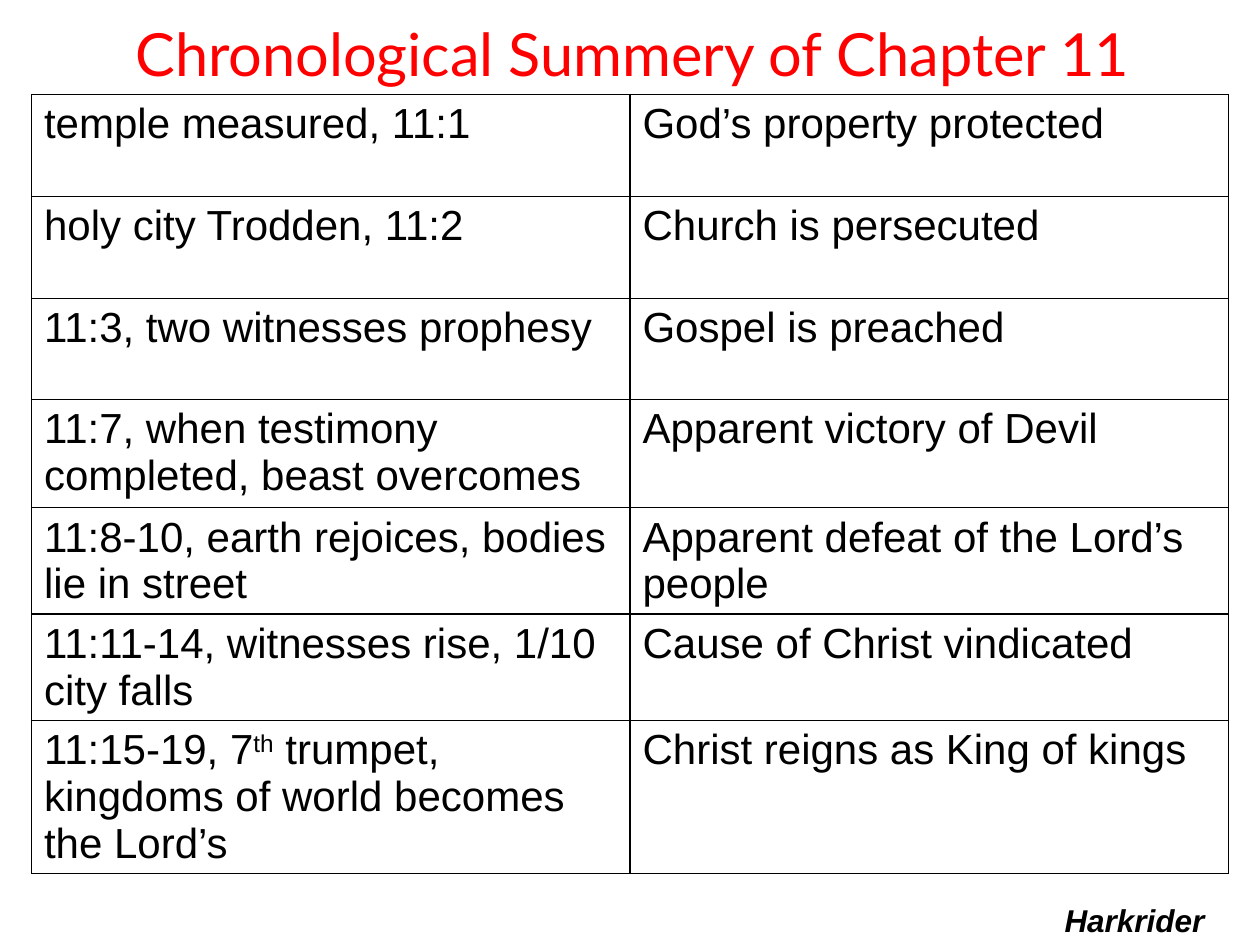
from lxml import etree
from pptx import Presentation
from pptx.dml.color import RGBColor
from pptx.enum import text
from pptx.oxml import ns
from pptx.util import Inches, Pt

# Content: (events as (text, is_superscript) runs, meaning)
TITLE = "Chronological Summery of Chapter 11"
AUTHOR = "Harkrider"
EVENTS = [
    ([("temple measured, 11:1", False)], "God’s property protected"),
    ([("holy city Trodden, 11:2", False)], "Church is persecuted"),
    ([("11:3, two witnesses prophesy", False)], "Gospel is preached"),
    ([("11:7, when testimony completed, beast overcomes", False)],
     "Apparent victory of Devil"),
    ([("11:8-10, earth rejoices, bodies lie in street", False)],
     "Apparent defeat of the Lord’s people"),
    ([("11:11-14, witnesses rise, 1/10 city falls", False)],
     "Cause of Christ vindicated"),
    ([("11:15-19, 7", False), ("th", True),
      (" trumpet, kingdoms of world becomes the Lord’s", False)],
     "Christ reigns as King of kings"),
]
ROW_HEIGHTS = [0.81, 0.81, 0.8, 0.86, 0.81, 0.8, 0.86]
COLUMN_WIDTH = 4.75

# Formats
TITLE_FONT = {"name": "Lato", "size": Pt(34), "bold": False}
CELL_FONT = {"name": "Arial", "size": Pt(24), "bold": False}
AUTHOR_FONT = {"name": "Arial", "size": Pt(18), "bold": True, "italic": True}
BLACK, RED = "000000", "FF0000"


def color(hex_code):
    return RGBColor.from_string(hex_code)


def add_run(paragraph, words, font_format, hex_code, superscript=False):
    run = paragraph.add_run()
    run.text = words
    for attribute, value in font_format.items():
        setattr(run.font, attribute, value)
    run.font.color.rgb = color(hex_code)
    if superscript:
        run.font._element.set("baseline", "30000")


def add_borders(cell, hex_code, width):
    properties = cell._tc.get_or_add_tcPr()
    for position, side in enumerate(("lnL", "lnR", "lnT", "lnB")):
        line = etree.Element(ns.qn(f"a:{side}"), w=str(Pt(width)))
        fill = etree.SubElement(line, ns.qn("a:solidFill"))
        etree.SubElement(fill, ns.qn("a:srgbClr"), val=hex_code)
        properties.insert(position, line)


def place(shape, left, top, width, height):
    shape.left, shape.top = Inches(left), Inches(top)
    shape.width, shape.height = Inches(width), Inches(height)


def main():
    deck = Presentation()
    deck.slide_width, deck.slide_height = Inches(10), Inches(7.5)
    slide = deck.slides.add_slide(deck.slide_layouts[5])

    # Title
    title = slide.shapes.title
    place(title, 0.21, -0.08, 9.62, 1)
    title.text_frame.vertical_anchor = text.MSO_ANCHOR.MIDDLE
    heading = title.text_frame.paragraphs[0]
    heading.alignment = text.PP_ALIGN.CENTER
    add_run(heading, TITLE, TITLE_FONT, RED)

    # Table of events and their meanings
    summary = slide.shapes.add_table(
        len(EVENTS), 2, Inches(0.25), Inches(0.75),
        Inches(2 * COLUMN_WIDTH), Inches(sum(ROW_HEIGHTS))).table
    summary.first_row = summary.horz_banding = False
    for column in summary.columns:
        column.width = Inches(COLUMN_WIDTH)
    for row, height, (event, meaning) in zip(summary.rows, ROW_HEIGHTS, EVENTS):
        row.height = Inches(height)
        for cell, runs in zip(row.cells, (event, [(meaning, False)])):
            cell.fill.background()
            add_borders(cell, BLACK, 1)
            for words, superscript in runs:
                add_run(cell.text_frame.paragraphs[0], words, CELL_FONT,
                        BLACK, superscript)

    # Author
    author = slide.shapes.add_textbox(
        Inches(8.35), Inches(7.1), Inches(1.31), Inches(0.4))
    author.text_frame.word_wrap = False
    author.text_frame.auto_size = text.MSO_AUTO_SIZE.SHAPE_TO_FIT_TEXT
    add_run(author.text_frame.paragraphs[0], AUTHOR, AUTHOR_FONT, BLACK)

    deck.save("out.pptx")


if __name__ == "__main__":
    main()
